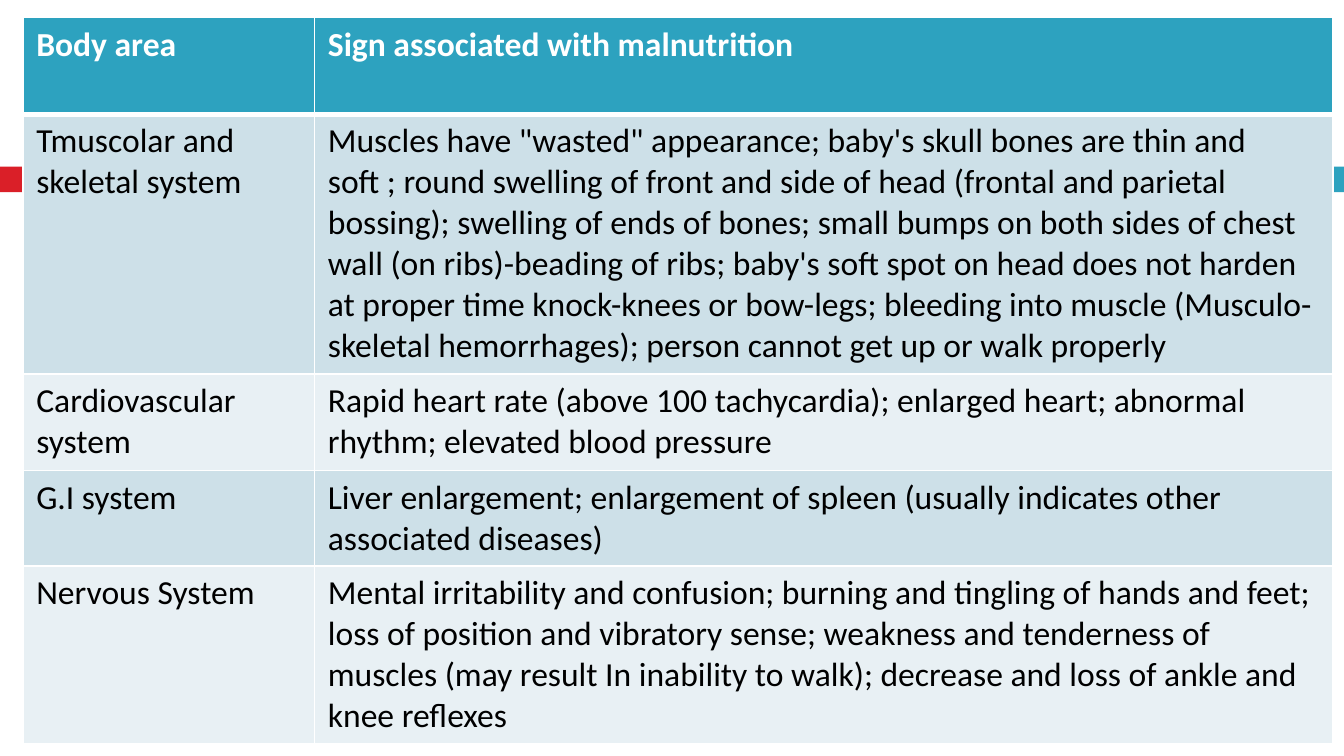
from lxml.etree import SubElement
from pptx import Presentation
from pptx.dml.color import RGBColor
from pptx.enum.shapes import MSO_SHAPE
from pptx.oxml.ns import qn
from pptx.util import Inches, Pt

WHITE = RGBColor(0xFF, 0xFF, 0xFF)
BLACK = RGBColor(0x00, 0x00, 0x00)
RED = RGBColor(0xDA, 0x1F, 0x28)
TEAL = RGBColor(0x2D, 0xA2, 0xBF)
BLUE_BAND = RGBColor(0xCD, 0xE0, 0xE8)
PALE_BAND = RGBColor(0xE8, 0xF0, 0xF4)

COLUMN_WIDTHS = [2.17, 7.58]
# Least heights: rows grow to fit their text
ROW_HEIGHTS = [0.72, 0.89, 0.72, 0.57, 0.9]
SIGNS = [
    ("Body area", "Sign associated with malnutrition"),
    ("Tmuscolar and skeletal system",
     "Muscles have \"wasted\" appearance; baby's skull bones are thin and soft ; "
     "round swelling of front and side of head (frontal and parietal bossing); "
     "swelling of ends of bones; small bumps on both sides of chest wall "
     "(on ribs)-beading of ribs; baby's soft spot on head does not harden at "
     "proper time knock-knees or bow-legs; bleeding into muscle "
     "(Musculo-skeletal hemorrhages); person cannot get up or walk properly"),
    ("Cardiovascular system",
     "Rapid heart rate (above 100 tachycardia); enlarged heart; "
     "abnormal rhythm; elevated blood pressure"),
    ("G.I system",
     "Liver enlargement; enlargement of spleen (usually indicates other "
     "associated diseases)"),
    ("Nervous System",
     "Mental irritability and confusion; burning and tingling of hands and feet; "
     "loss of position and vibratory sense; weakness and tenderness of muscles "
     "(may result In inability to walk); decrease and loss of ankle and knee "
     "reflexes"),
]


def add_bar(page, left, top, width, height, color):
    bar = page.shapes.add_shape(MSO_SHAPE.RECTANGLE, Inches(left), Inches(top),
                                Inches(width), Inches(height))
    bar.shadow.inherit = False
    bar.fill.solid()
    bar.fill.fore_color.rgb = color
    bar.line.fill.background()


def add_title_rule(page, left, top, width, height):
    """Short red bar, a gap, then a teal bar to the right edge."""
    red_width, gap = 0.58, 0.07
    teal_offset = red_width + gap
    add_bar(page, left, top, red_width, height, RED)
    add_bar(page, left + teal_offset, top, width - teal_offset, height, TEAL)


def set_borders(cell, widths):
    properties = cell._tc.get_or_add_tcPr()
    # Border lines must come before the fill
    for index, (side, points) in enumerate(widths.items()):
        line = SubElement(properties, qn(f"a:ln{side}"), w=str(Pt(points)))
        fill = SubElement(line, qn("a:solidFill"))
        SubElement(fill, qn("a:srgbClr"), val=str(WHITE))
        properties.insert(index, line)


def fill_cell(cell, text, row_index):
    is_header = row_index == 0
    cell.fill.solid()
    if is_header:
        cell.fill.fore_color.rgb = TEAL
    else:
        cell.fill.fore_color.rgb = BLUE_BAND if row_index % 2 else PALE_BAND
    span = cell.text_frame.paragraphs[0].add_run()
    span.text = text
    span.font.name = "Calibri"
    span.font.size = Pt(18)
    span.font.bold = is_header
    span.font.color.rgb = WHITE if is_header else BLACK
    set_borders(cell, {"L": 1, "R": 1, "T": 3 if row_index == 1 else 1,
                       "B": 3 if is_header else 1})


def add_signs_table(page, left, top, width, height):
    frame = page.shapes.add_table(
        len(SIGNS), len(COLUMN_WIDTHS), Inches(left), Inches(top),
        Inches(width), Inches(height))
    table = frame.table
    for column, column_width in zip(table.columns, COLUMN_WIDTHS):
        column.width = Inches(column_width)
    for row_index, (row, texts) in enumerate(zip(table.rows, SIGNS)):
        row.height = Inches(ROW_HEIGHTS[row_index])
        for cell, text in zip(row.cells, texts):
            fill_cell(cell, text, row_index)
    # Setting the rows resizes the frame
    frame.height = Inches(height)


def main():
    deck = Presentation()
    deck.slide_width = Inches(10)
    deck.slide_height = deck.slide_width * 9 // 16
    page = deck.slides.add_slide(deck.slide_layouts[6])
    add_title_rule(page, 0, 1.24, 10, 0.19)
    add_signs_table(page, 0.17, 0.13, sum(COLUMN_WIDTHS), 5.34)
    deck.save("out.pptx")


if __name__ == "__main__":
    main()
